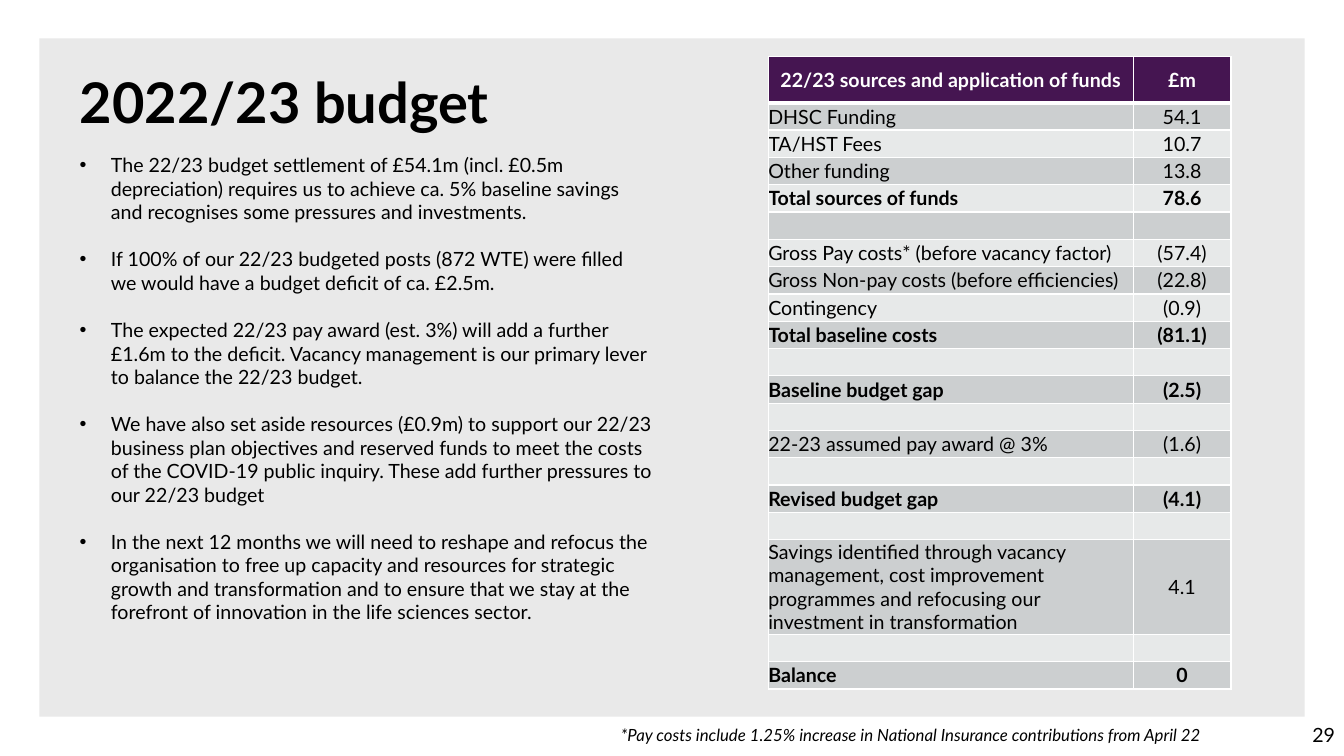
from lxml.etree import SubElement
from pptx import Presentation
from pptx.dml.color import RGBColor
from pptx.enum.shapes import MSO_SHAPE
from pptx.enum.text import MSO_ANCHOR, MSO_AUTO_SIZE, PP_ALIGN
from pptx.oxml.ns import qn
from pptx.util import Inches, Pt

FONT = "Lato"
COLORS = {
    "panel": "E9E9E9",
    "header": "451551",
    "odd": "CCCFD0",
    "even": "E7E9E9",
    "white": "FFFFFF",
    "black": "000000",
}
BULLETS = [
    "The 22/23 budget settlement of £54.1m (incl. £0.5m depreciation) requires us to "
    "achieve ca. 5% baseline savings and recognises some pressures and investments.",
    "If 100% of our 22/23 budgeted posts (872 WTE) were filled we would have a budget "
    "deficit of ca. £2.5m.",
    "The expected 22/23 pay award (est. 3%) will add a further £1.6m to the deficit. "
    "Vacancy management is our primary lever to balance the 22/23 budget.",
    "We have also set aside resources (£0.9m) to support our 22/23 business plan "
    "objectives and reserved funds to meet the costs of the COVID-19 public inquiry. "
    "These add further pressures to our 22/23 budget",
    "In the next 12 months we will need to reshape and refocus the organisation to free "
    "up capacity and resources for strategic growth and transformation and to ensure "
    "that we stay at the forefront of innovation in the life sciences sector.",
]
SAVINGS = ("Savings identified through vacancy management, cost improvement programmes "
           "and refocusing our investment in transformation")
BLANK = ("", "")
FUNDS = [
    ("22/23 sources and application of funds", "£m"),
    ("DHSC Funding", "54.1"),
    ("TA/HST Fees", "10.7"),
    ("Other funding", "13.8"),
    ("Total sources of funds", "78.6"),
    BLANK,
    ("Gross Pay costs* (before vacancy factor)", "(57.4)"),
    ("Gross Non-pay costs (before efficiencies)", "(22.8)"),
    ("Contingency", "(0.9)"),
    ("Total baseline costs", "(81.1)"),
    BLANK,
    ("Baseline budget gap", "(2.5)"),
    BLANK,
    ("22-23 assumed pay award @ 3%", "(1.6)"),
    BLANK,
    ("Revised budget gap", "(4.1)"),
    BLANK,
    (SAVINGS, "4.1"),
    BLANK,
    ("Balance", "0"),
]
BOLD_LABELS = {"Total sources of funds", "Total baseline costs", "Baseline budget gap",
               "Revised budget gap", "Balance"}
TABLE_HEIGHT, HEADER_HEIGHT, SAVINGS_HEIGHT = 6.28, 0.46, 0.94
ROW_HEIGHT = (TABLE_HEIGHT - HEADER_HEIGHT - SAVINGS_HEIGHT) / (len(FUNDS) - 2)


def rgb(name):
    return RGBColor.from_string(COLORS[name])


def format_runs(p, size, color="black", bold=False, italic=False):
    for r in p.runs:
        r.font.name = FONT
        r.font.size = Pt(size)
        r.font.bold = bold
        r.font.italic = italic
        r.font.color.rgb = rgb(color)


def place(shape, left, top, width, height):
    shape.left, shape.top = Inches(left), Inches(top)
    shape.width, shape.height = Inches(width), Inches(height)


def add_panel(s):
    """Grey panel, placed behind the title and the list."""
    panel = s.shapes.add_shape(MSO_SHAPE.RECTANGLE, Inches(0.39), Inches(0.38),
                               Inches(12.55), Inches(6.73))
    panel.shadow.inherit = False
    panel.fill.solid()
    panel.fill.fore_color.rgb = rgb("panel")
    panel.line.fill.background()
    s.shapes.title.element.addprevious(panel.element)


def fill_title(title):
    place(title, 0.69, 0.62, 5.37, 0.77)
    tf = title.text_frame
    tf.text = "2022/23 budget"
    tf.auto_size = MSO_AUTO_SIZE.NONE
    tf.vertical_anchor = MSO_ANCHOR.TOP
    tf.paragraphs[0].alignment = PP_ALIGN.LEFT
    format_runs(tf.paragraphs[0], 40, bold=True)


def fill_bullets(body):
    place(body, 0.69, 1.47, 5.89, 5.12)
    tf = body.text_frame
    tf.text = "\n".join(BULLETS)
    tf.auto_size = MSO_AUTO_SIZE.NONE
    tf.vertical_anchor = MSO_ANCHOR.TOP
    for i, p in enumerate(tf.paragraphs):
        p.space_before = Pt(16.8 if i else 0)
        format_runs(p, 14)
        pPr = p._p.get_or_add_pPr()
        pPr.set("marL", str(Inches(0.31)))
        pPr.set("indent", str(-Inches(0.31)))
        SubElement(pPr, qn("a:buFont"), typeface="Arial")
        SubElement(pPr, qn("a:buChar"), char="•")


def add_text(s, text, left, top, width, height, size, align=PP_ALIGN.LEFT, italic=False):
    box = s.shapes.add_textbox(Inches(left), Inches(top), Inches(width), Inches(height))
    tf = box.text_frame
    tf.word_wrap = True
    tf.vertical_anchor = MSO_ANCHOR.MIDDLE
    tf.text = text
    tf.paragraphs[0].alignment = align
    format_runs(tf.paragraphs[0], size, italic=italic)


def set_borders(cell, bottom):
    tcPr = cell._tc.get_or_add_tcPr()
    for side, width in (("L", 1), ("R", 1), ("T", 1), ("B", bottom)):
        ln = SubElement(tcPr, qn(f"a:ln{side}"), w=str(Pt(width)))
        fill = SubElement(ln, qn("a:solidFill"))
        SubElement(fill, qn("a:srgbClr"), val=COLORS["white"])


def fill_cell(cell, text, fill, color, bold, align, bottom):
    set_borders(cell, bottom)
    cell.fill.solid()
    cell.fill.fore_color.rgb = rgb(fill)
    cell.margin_left = cell.margin_right = cell.margin_top = cell.margin_bottom = 0
    cell.vertical_anchor = MSO_ANCHOR.MIDDLE
    cell.text = text
    p = cell.text_frame.paragraphs[0]
    p.alignment = align
    format_runs(p, 14, color, bold)
    if not text:
        SubElement(p._p, qn("a:endParaRPr"), sz="1400")


def add_funds_table(s):
    frame = s.shapes.add_table(len(FUNDS), 2, Inches(7.62), Inches(0.56),
                               Inches(4.59), Inches(TABLE_HEIGHT))
    table = frame.table
    for column, width in zip(table.columns, (3.62, 0.97)):
        column.width = Inches(width)
    for i, values in enumerate(FUNDS):
        header = i == 0
        label = values[0]
        special = {0: HEADER_HEIGHT, FUNDS.index((SAVINGS, "4.1")): SAVINGS_HEIGHT}
        table.rows[i].height = Inches(special.get(i, ROW_HEIGHT))
        fill = "header" if header else "odd" if i % 2 else "even"
        for j, text in enumerate(values):
            fill_cell(table.cell(i, j), text, fill,
                      color="white" if header else "black",
                      bold=header or label in BOLD_LABELS,
                      align=PP_ALIGN.CENTER if header or j else PP_ALIGN.LEFT,
                      bottom=3 if header else 1)


def main():
    prs = Presentation()
    prs.slide_width, prs.slide_height = Inches(13.33), Inches(7.5)
    s = prs.slides.add_slide(prs.slide_layouts[1])
    add_panel(s)
    fill_title(s.shapes.title)
    fill_bullets(s.placeholders[1])
    add_funds_table(s)
    add_text(s, "*Pay costs include 1.25% increase in National Insurance contributions "
             "from April 22", 6.06, 7.14, 6.3, 0.3, 12, italic=True)
    add_text(s, "29", 10.34, 7.09, 3, 0.4, 14, align=PP_ALIGN.RIGHT)
    prs.save("out.pptx")


if __name__ == "__main__":
    main()
